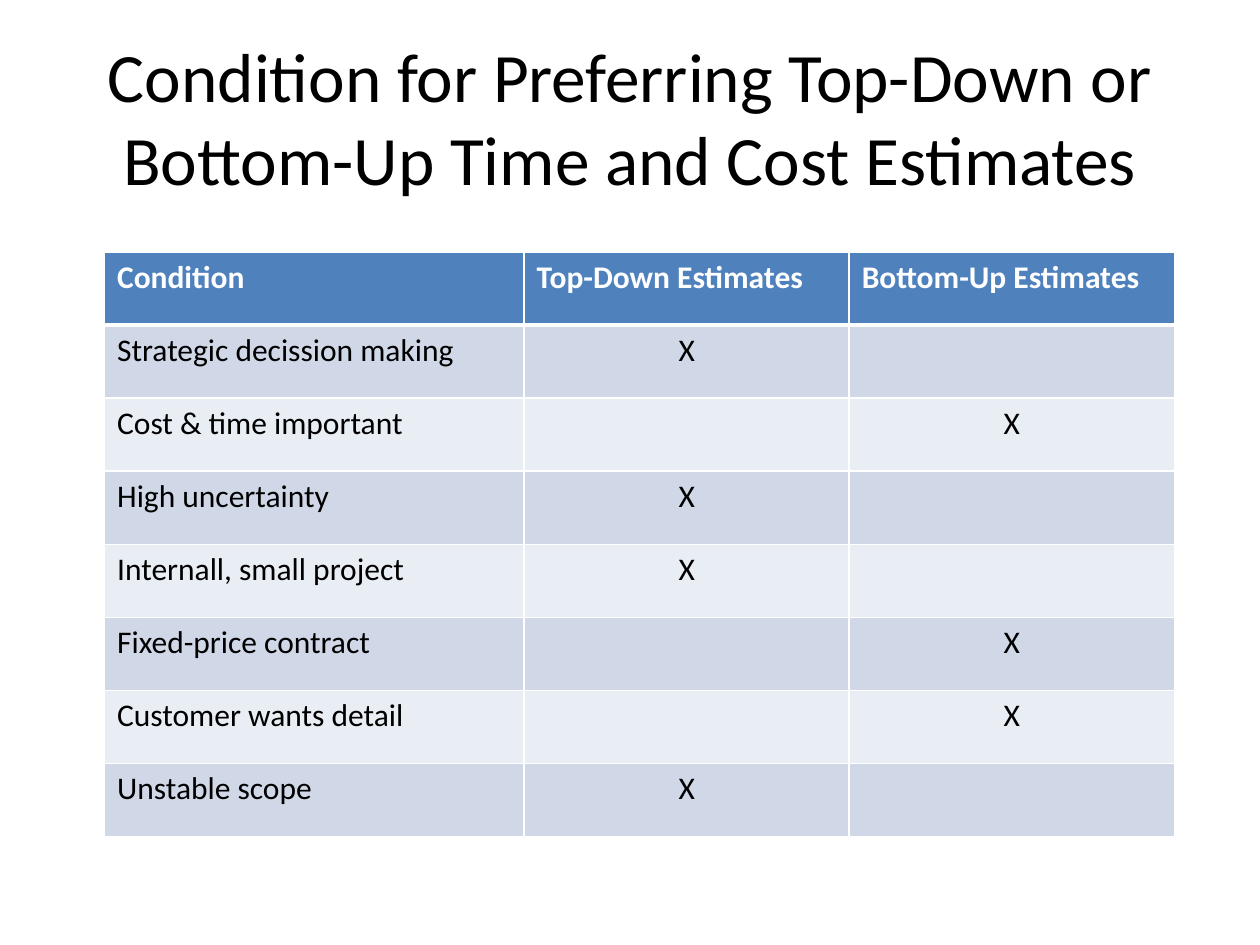
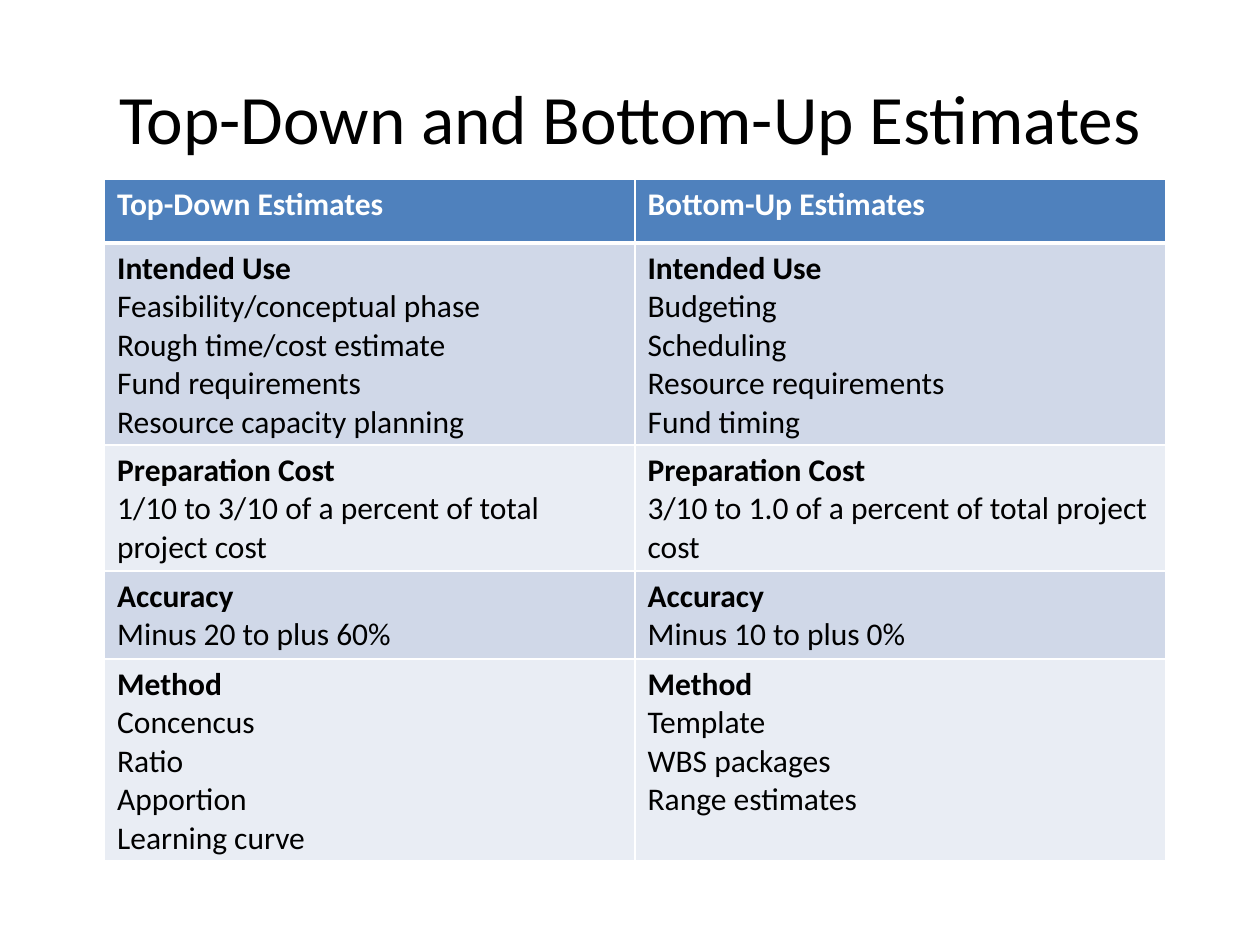
from lxml.etree import SubElement
from pptx import Presentation
from pptx.dml.color import RGBColor
from pptx.enum.text import MSO_ANCHOR, PP_ALIGN
from pptx.oxml.ns import qn
from pptx.util import Inches, Pt

# Content: cells are lists of lines
CONDITIONS = {
    "title": "Condition for Preferring Top-Down or Bottom-Up Time and Cost Estimates",
    "top": 2,
    "cols": [3.33, 2.58, 2.58],
    "heights": [0.58] * 8,
    "header": ["Condition", "Top-Down Estimates", "Bottom-Up Estimates"],
    "rows": [
        [["Strategic decission making"], ["X"], []],
        [["Cost & time important"], [], ["X"]],
        [["High uncertainty"], ["X"], []],
        [["Internall, small project"], ["X"], []],
        [["Fixed-price contract"], [], ["X"]],
        [["Customer wants detail"], [], ["X"]],
        [["Unstable scope"], ["X"], []],
    ],
}
COMPARISON = {
    "title": "Top-Down and Bottom-Up Estimates",
    "top": 1.42,
    "cols": [4.21, 4.21],
    "heights": [0.51, 1.6, 1, 0.7, 1.6],
    "header": ["Top-Down Estimates", "Bottom-Up Estimates"],
    "rows": [
        [["Intended Use", "Feasibility/conceptual phase", "Rough time/cost estimate",
          "Fund requirements", "Resource capacity planning"],
         ["Intended Use", "Budgeting", "Scheduling", "Resource requirements",
          "Fund timing"]],
        [["Preparation Cost", "1/10 to 3/10 of a percent of total project cost"],
         ["Preparation Cost", "3/10 to 1.0 of a percent of total project cost"]],
        [["Accuracy", "Minus 20 to plus 60%"],
         ["Accuracy", "Minus 10 to plus 0%"]],
        [["Method", "Concencus", "Ratio", "Apportion", "Learning curve"],
         ["Method", "Template", "WBS packages", "Range estimates"]],
    ],
}

# Shared style
COLORS = {"text": "000000", "white": "FFFFFF", "header": "4F81BD",
          "odd": "D0D8E8", "even": "E9EDF4"}
FONT = "Calibri"
TABLE_LEFT = 0.83


def style(p, size, color, bold=False, align=PP_ALIGN.LEFT):
    p.alignment = align
    p.font.name = FONT
    p.font.size = Pt(size)
    p.font.bold = bold
    p.font.color.rgb = RGBColor.from_string(COLORS[color])


def add_title(s, text):
    tf = s.shapes.add_textbox(Inches(0.5), Inches(0.3), Inches(9), Inches(1.25)).text_frame
    tf.word_wrap = True
    tf.vertical_anchor = MSO_ANCHOR.MIDDLE
    p = tf.paragraphs[0]
    p.text = text
    style(p, 39.6, "text", align=PP_ALIGN.CENTER)


def set_borders(cell, row):
    # The line under the header row is thicker
    widths = {"L": 1, "R": 1, "T": 3 if row == 1 else 1, "B": 3 if row == 0 else 1}
    tc_pr = cell._tc.get_or_add_tcPr()
    for side, width in widths.items():
        ln = SubElement(tc_pr, qn(f"a:ln{side}"), w=str(Pt(width)))
        fill = SubElement(ln, qn("a:solidFill"))
        SubElement(fill, qn("a:srgbClr"), val=COLORS["white"])


def fill_cell(cell, row, lines):
    set_borders(cell, row)
    band = "header" if row == 0 else "odd" if row % 2 else "even"
    cell.fill.solid()
    cell.fill.fore_color.rgb = RGBColor.from_string(COLORS[band])
    tf = cell.text_frame
    tf.text = "\n".join(lines)
    for i, p in enumerate(tf.paragraphs):
        # The first of several lines is the cell's heading
        bold = row == 0 or (i == 0 and len(lines) > 1)
        align = PP_ALIGN.CENTER if lines == ["X"] else PP_ALIGN.LEFT
        style(p, 18, "white" if row == 0 else "text", bold, align)


def add_table(s, data):
    cols, heights = data["cols"], data["heights"]
    table = s.shapes.add_table(
        len(heights), len(cols), Inches(TABLE_LEFT), Inches(data["top"]),
        Inches(sum(cols)), Inches(sum(heights))).table
    for column, width in zip(table.columns, cols):
        column.width = Inches(width)
    for row, height in zip(table.rows, heights):
        row.height = Inches(height)
    rows = [[[label] for label in data["header"]]] + data["rows"]
    for r, cells in enumerate(rows):
        for c, lines in enumerate(cells):
            fill_cell(table.cell(r, c), r, lines)


def main():
    prs = Presentation()
    prs.slide_width, prs.slide_height = Inches(10), Inches(7.5)
    for data in (CONDITIONS, COMPARISON):
        s = prs.slides.add_slide(prs.slide_layouts[6])
        add_title(s, data["title"])
        add_table(s, data)
    prs.save("out.pptx")


if __name__ == "__main__":
    main()
